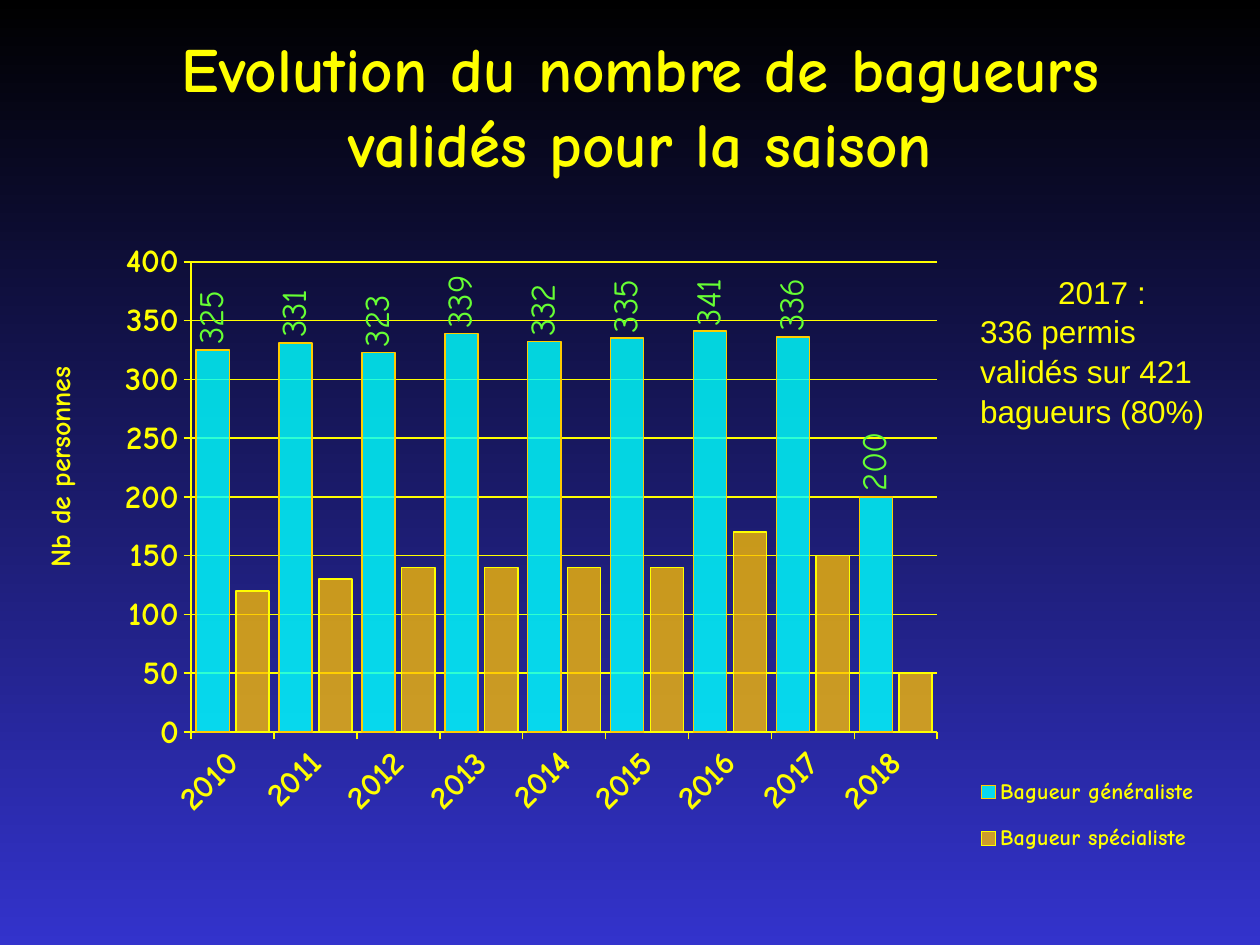
from dataclasses import dataclass

from lxml import etree
from pptx import Presentation
from pptx.chart.data import CategoryChartData
from pptx.dml.color import RGBColor
from pptx.enum.chart import (XL_CHART_TYPE, XL_LABEL_POSITION,
                             XL_LEGEND_POSITION, XL_TICK_MARK)
from pptx.enum.text import MSO_ANCHOR, MSO_AUTO_SIZE, PP_ALIGN
from pptx.oxml import parse_xml
from pptx.oxml.ns import nsdecls, qn
from pptx.util import Pt

COLUMNS = XL_CHART_TYPE.COLUMN_CLUSTERED
LABEL_ABOVE = XL_LABEL_POSITION.OUTSIDE_END
LEGEND_RIGHT = XL_LEGEND_POSITION.RIGHT
TICK_OUTSIDE = XL_TICK_MARK.OUTSIDE
MIDDLE = MSO_ANCHOR.MIDDLE
NO_AUTOFIT, GROW = MSO_AUTO_SIZE.NONE, MSO_AUTO_SIZE.SHAPE_TO_FIT_TEXT
LEFT, CENTER = PP_ALIGN.LEFT, PP_ALIGN.CENTER


@dataclass(frozen=True)
class Theme:
    heading_font: str = "Comic Neue"
    body_font: str = "Arial"
    text: str = "FFFF00"
    label: str = "66FF33"
    background: tuple = ("000000", "3333CC")
    title_size: float = 36
    note_size: float = 18
    tick_size: float = 18.7
    label_size: float = 19.8
    axis_title_size: float = 16
    legend_size: float = 12.6
    line_width: float = 0.86


THEME = Theme()
YEARS = [str(year) for year in range(2010, 2019)]
# Name, values, fill, opacity in percent, outline
SERIES = [
    ("Bagueur généraliste", (325, 331, 323, 339, 332, 335, 341, 336, 200),
     "00FFFF", 82, "FFCC00"),
    ("Bagueur spécialiste", (120, 130, 140, 140, 140, 140, 170, 150, 50),
     "FFC000", 76, "FFFF00"),
]


def format_font(font, size, color=THEME.text, name=THEME.heading_font, bold=True):
    font.name, font.size, font.bold = name, Pt(size), bold
    font.color.rgb = RGBColor.from_string(color)


def format_line(line, color=THEME.text):
    line.color.rgb = RGBColor.from_string(color)
    line.width = Pt(THEME.line_width)


def write(paragraph, text, align=LEFT, spacing=None, **font_format):
    run = paragraph.add_run()
    run.text = text
    format_font(run.font, **font_format)
    paragraph.alignment = align
    paragraph.line_spacing = spacing
    return run


def rotate(element, degrees):
    body = next(element.iter(qn("a:bodyPr")))
    body.set("rot", str(degrees * 60000))
    body.set("vert", "horz")


def set_layout(element, inner=False, **fractions):
    """Place a chart part by fractions of the chart's box."""
    layout = element.find(qn("c:layout"))
    if layout is None:
        layout = etree.Element(qn("c:layout"))
        overlay = element.find(qn("c:overlay"))
        element.insert(0 if overlay is None else element.index(overlay), layout)
    for child in list(layout):
        layout.remove(child)
    manual = etree.SubElement(layout, qn("c:manualLayout"))
    if inner:
        etree.SubElement(manual, qn("c:layoutTarget")).set("val", "inner")
    for key in ("x", "y"):
        etree.SubElement(manual, qn(f"c:{key}Mode")).set("val", "edge")
    for key, value in fractions.items():
        etree.SubElement(manual, qn(f"c:{key}")).set("val", str(value))


def set_background(slide):
    fill = slide.background.fill
    fill.gradient()
    fill.gradient_angle = 270
    for stop, color, position in zip(fill.gradient_stops, THEME.background, (0, 1)):
        stop.color.rgb = RGBColor.from_string(color)
        stop.position = position


def place_title(slide, left, top, width, height):
    title = slide.shapes.title
    title.left, title.top, title.width, title.height = left, top, width, height
    frame = title.text_frame
    frame.word_wrap, frame.auto_size, frame.vertical_anchor = True, NO_AUTOFIT, MIDDLE
    run = write(frame.paragraphs[0], "Evolution du nombre de bagueurs validés pour la saison",
                align=CENTER, size=THEME.title_size)
    # Text shadow
    run.font.color._xFill.addnext(parse_xml(
        f'<a:effectLst {nsdecls("a")}><a:outerShdw dist="35921" dir="2700000">'
        '<a:srgbClr val="000000"/></a:outerShdw></a:effectLst>')) if hasattr(
        run.font.color, "_xFill") else run._r.rPr.find(qn("a:solidFill")).addnext(parse_xml(
            f'<a:effectLst {nsdecls("a")}><a:outerShdw dist="35921" dir="2700000">'
            '<a:srgbClr val="000000"/></a:outerShdw></a:effectLst>'))


def format_axes(chart):
    category_axis, value_axis = chart.category_axis, chart.value_axis
    for axis in (category_axis, value_axis):
        axis.major_tick_mark = TICK_OUTSIDE
        format_line(axis.format.line)
        format_font(axis.tick_labels.font, THEME.tick_size)
    rotate(category_axis._element, -45)
    value_axis.minimum_scale, value_axis.maximum_scale = 0, 400
    value_axis.major_unit = 50
    value_axis.tick_labels.number_format = "#,##0"
    value_axis.tick_labels.number_format_is_linked = False
    format_line(value_axis.major_gridlines.format.line)
    title = value_axis.axis_title
    write(title.text_frame.paragraphs[0], "Nb de personnes", size=THEME.axis_title_size)
    rotate(title._element, -90)
    set_layout(title._element, x=0.05, y=0.22)


def format_series(plot):
    plot.gap_width, plot.overlap, plot.vary_by_categories = 30, -20, False
    for series, (_, _, color, opacity, outline) in zip(plot.series, SERIES):
        fill = series.format.fill
        fill.solid()
        fill.fore_color.rgb = RGBColor.from_string(color)
        rgb = next(series._element.iter(qn("a:srgbClr")))
        etree.SubElement(rgb, qn("a:alpha")).set("val", str(opacity * 1000))
        format_line(series.format.line, outline)
    # Upright values over the first series
    labels = plot.series[0].data_labels
    labels.show_value, labels.position = True, LABEL_ABOVE
    format_font(labels.font, THEME.label_size, THEME.label, bold=False)
    rotate(labels._element, -90)


def place_chart(slide, left, top, width, height):
    data = CategoryChartData()
    data.categories = YEARS
    for name, values, *_ in SERIES:
        data.add_series(name, values)
    chart = slide.shapes.add_chart(COLUMNS, left, top, width, height, data).chart
    chart.has_title = False
    format_font(chart.font, THEME.label_size)
    format_axes(chart)
    format_series(chart.plots[0])
    plot_area = next(chart._chartSpace.iter(qn("c:plotArea")))
    set_layout(plot_area, inner=True, x=0.174, y=0.071, w=0.6, h=0.7)
    # Legend
    chart.has_legend = True
    legend = chart.legend
    legend.position, legend.include_in_layout = LEGEND_RIGHT, False
    format_font(legend.font, THEME.legend_size)
    set_layout(legend._element, x=0.79, y=0.81, w=0.21, h=0.17)


def place_note(slide, left, top, width, height):
    frame = slide.shapes.add_textbox(left, top, width, height).text_frame
    frame.word_wrap, frame.auto_size = True, GROW
    note_format = dict(size=THEME.note_size, name=THEME.body_font, bold=False, spacing=1.05)
    write(frame.paragraphs[0], "2017 :", align=CENTER, **note_format)
    write(frame.add_paragraph(), "336 permis validés sur 421 bagueurs (80%)", **note_format)


def main():
    presentation = Presentation()
    presentation.slide_width, presentation.slide_height = Pt(720), Pt(540)
    slide = presentation.slides.add_slide(presentation.slide_layouts[5])
    set_background(slide)
    place_title(slide, Pt(60), Pt(15), Pt(612), Pt(90))
    place_chart(slide, Pt(-14.4), Pt(122.4), Pt(710.6), Pt(383.8))
    place_note(slide, Pt(553), Pt(151.2), Pt(153.4), Pt(94.3))
    presentation.save("out.pptx")


if __name__ == "__main__":
    main()
